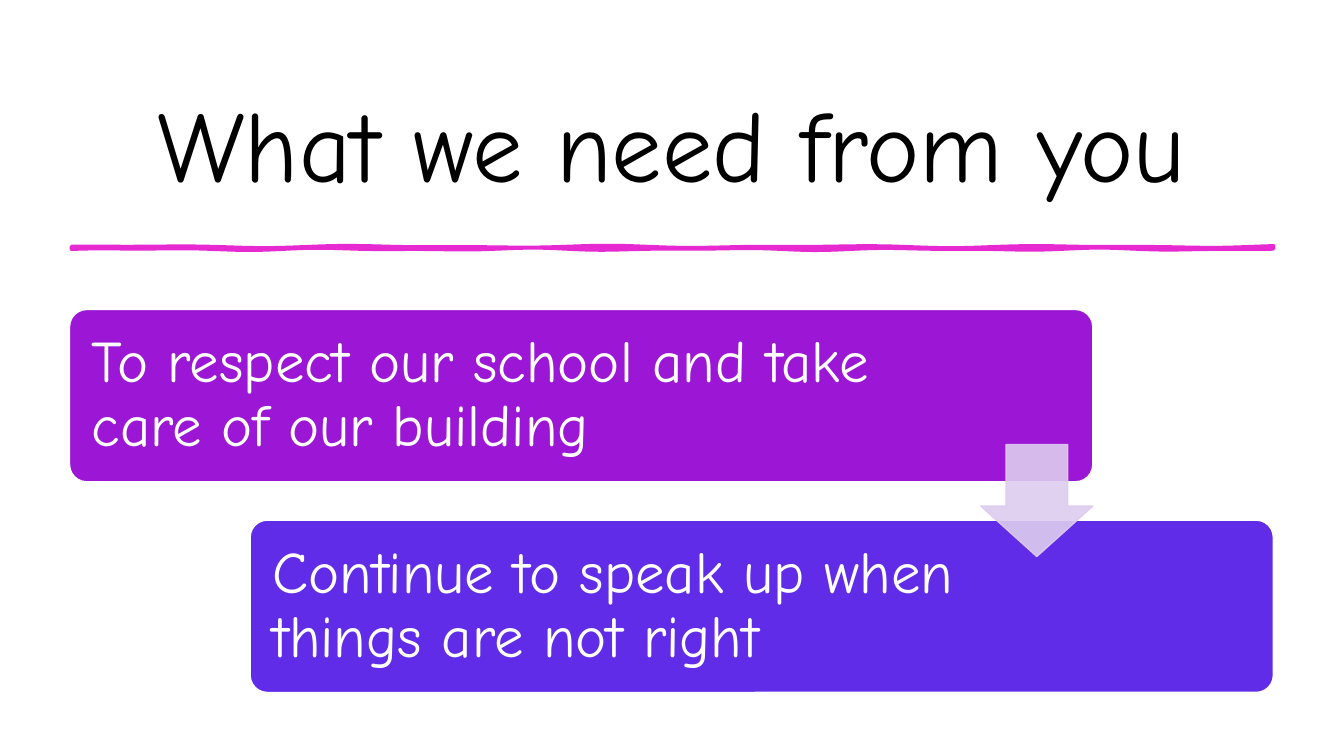
from math import pi, sin

from lxml.etree import SubElement
from pptx import Presentation
from pptx.dml.color import RGBColor
from pptx.enum.shapes import MSO_SHAPE
from pptx.enum.text import MSO_ANCHOR, PP_ALIGN
from pptx.oxml.ns import qn
from pptx.util import Inches, Pt

WHITE = RGBColor(0xFF, 0xFF, 0xFF)
BLACK = RGBColor(0x00, 0x00, 0x00)
PINK = RGBColor(0xE7, 0x29, 0xD2)
PURPLE = RGBColor(0x9B, 0x17, 0xD5)
INDIGO = RGBColor(0x60, 0x2C, 0xE7)
LILAC = RGBColor(0xDE, 0xCC, 0xEF)

FONT = "Comic Neue"
HEADING = "What we need from you"
REQUESTS = [
    ("To respect our school and take care of our building", PURPLE, 1.84),
    ("Continue to speak up when things are not right", INDIGO, 3.08),
]

SLIDE_W, SLIDE_H = 13.33, 7.5
LEFT, CONTENT_W = 0.69, 11.94
CARD_W, CARD_H = 0.85 * CONTENT_W, 1.71
CARD_TOP, CARD_PITCH = 3.07, 2.09
CARD_SHIFT = CONTENT_W - CARD_W
PADDING = 0.17
ARROW = 0.65 * CARD_H
RULE_LEFT, RULE_RIGHT, RULE_STEPS = 0.71, 12.63, 120
RULE_EDGES = [(2.47, 1.9, 0), (2.45, 2.3, 1)]


def write(frame, text, size, color, align=PP_ALIGN.LEFT, spacing=None):
    frame.word_wrap = True
    frame.vertical_anchor = MSO_ANCHOR.MIDDLE
    paragraph = frame.paragraphs[0]
    paragraph.alignment = align
    paragraph.line_spacing = spacing
    run = paragraph.add_run()
    run.text = text
    run.font.name = FONT
    run.font.size = Pt(size)
    run.font.color.rgb = color


def paint(shape, fill, line, width):
    shape.shadow.inherit = False
    shape.fill.solid()
    shape.fill.fore_color.rgb = fill
    shape.line.color.rgb = line
    shape.line.width = Pt(width)


def add_preset(slide, preset, left, top, width, height, adjustments):
    box = [Inches(length) for length in (left, top, width, height)]
    shape = slide.shapes.add_shape(preset, *box)
    for index, value in enumerate(adjustments):
        shape.adjustments[index] = value
    return shape


def rule_edge(base, wavelength, phase):
    for step in range(RULE_STEPS + 1):
        x = RULE_LEFT + (RULE_RIGHT - RULE_LEFT) * step / RULE_STEPS
        turn = 2 * pi * x / wavelength + phase
        y = base + 0.007 * sin(turn) + 0.005 * sin(1.7 * turn)
        yield Inches(x), Inches(y)


def add_rule(slide):
    lower, upper = [list(rule_edge(*edge)) for edge in RULE_EDGES]
    outline = lower + upper[::-1]
    builder = slide.shapes.build_freeform(*outline[0])
    builder.add_line_segments(outline[1:], close=True)
    paint(builder.convert_to_shape(), PINK, PINK, 2.75)


def add_card(slide, index, text, color, right_inset):
    card = add_preset(
        slide, MSO_SHAPE.ROUNDED_RECTANGLE,
        LEFT + index * CARD_SHIFT, CARD_TOP + index * CARD_PITCH,
        CARD_W, CARD_H, [0.1],
    )
    paint(card, color, WHITE, 1)
    frame = card.text_frame
    frame.margin_left = frame.margin_top = frame.margin_bottom = Inches(PADDING)
    frame.margin_right = Inches(right_inset)
    write(frame, text, 42, WHITE, spacing=0.9)


def add_arrow(slide):
    arrow = add_preset(
        slide, MSO_SHAPE.DOWN_ARROW, LEFT + CARD_W - ARROW, 4.41,
        ARROW, ARROW, [0.55, 0.45],
    )
    paint(arrow, LILAC, LILAC, 1)
    for color in arrow.element.spPr.iter(qn("a:srgbClr")):
        SubElement(color, qn("a:alpha")).set("val", "90000")


def main():
    deck = Presentation()
    deck.slide_width, deck.slide_height = Inches(SLIDE_W), Inches(SLIDE_H)
    slide = deck.slides.add_slide(deck.slide_layouts[5])
    slide.background.fill.solid()
    slide.background.fill.fore_color.rgb = WHITE

    heading = slide.shapes.title
    heading.left, heading.top = Inches(LEFT), Inches(0.69)
    heading.width, heading.height = Inches(CONTENT_W), Inches(1.44)
    write(heading.text_frame, HEADING, 72, BLACK, PP_ALIGN.CENTER)

    add_rule(slide)
    for index, request in enumerate(REQUESTS):
        add_card(slide, index, *request)
    add_arrow(slide)
    deck.save("out.pptx")


if __name__ == "__main__":
    main()
